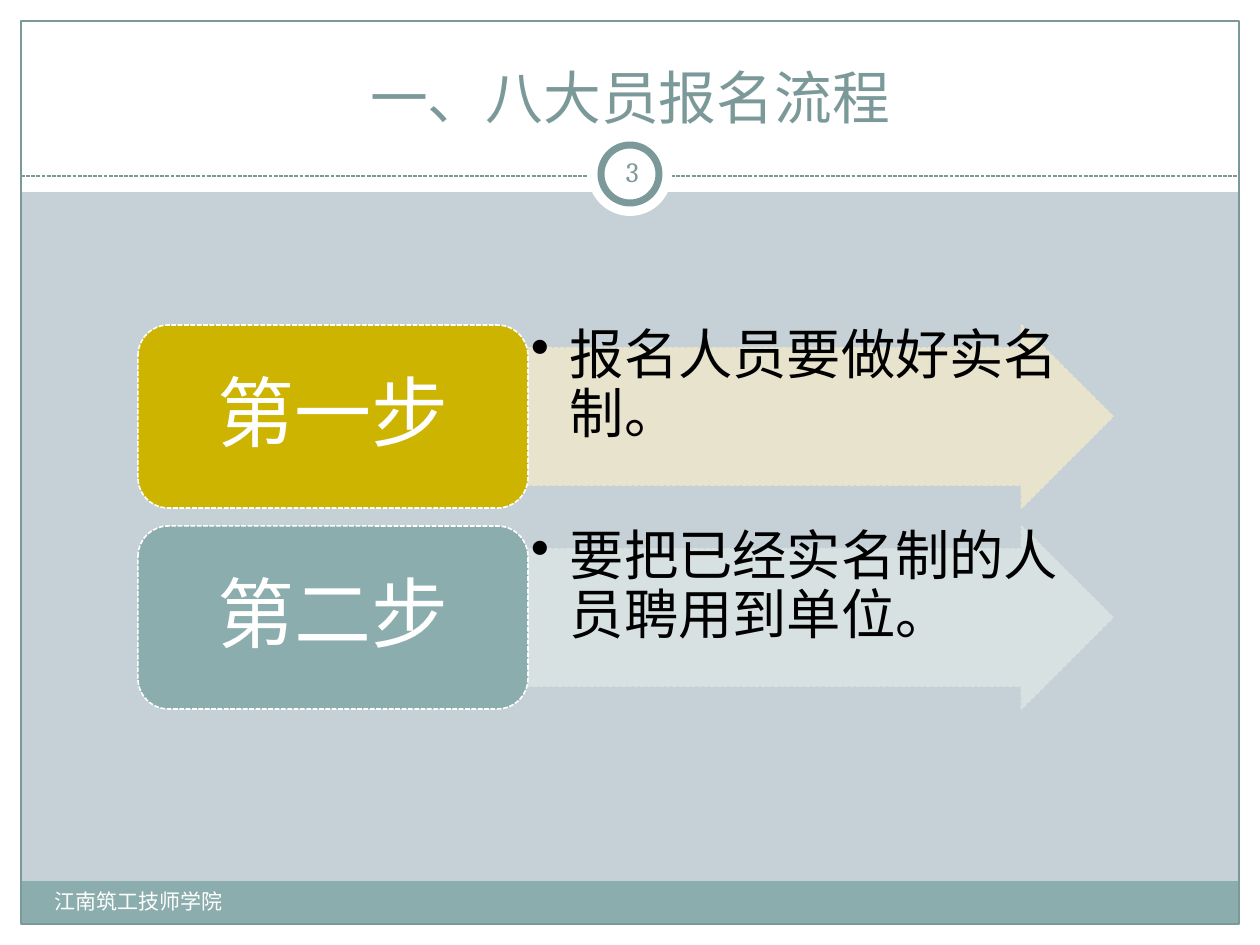
from dataclasses import dataclass
from typing import NamedTuple, Optional

from lxml.etree import SubElement
from pptx import Presentation
from pptx.dml.color import RGBColor
from pptx.enum.dml import MSO_LINE
from pptx.enum.shapes import MSO_CONNECTOR, MSO_SHAPE
from pptx.enum.text import MSO_ANCHOR, PP_ALIGN
from pptx.oxml.ns import qn
from pptx.shapes.autoshape import Shape
from pptx.slide import Slide
from pptx.util import Emu, Pt

EMU_PER_PX = 914400 / 126


@dataclass(frozen=True)
class Theme:
    font: str = "Cambria"
    background: str = "C5D1D7"
    white: str = "FFFFFF"
    black: str = "000000"
    accent: str = "7C999A"
    teal: str = "8CADAE"
    gold: str = "CCB400"
    pale_gold: str = "ECE5CC"
    pale_teal: str = "DAE3E3"
    title_size: int = 33
    footer_size: int = 12
    number_size: int = 16
    label_size: int = 44
    detail_size: int = 31
    thin_line: float = 0.75
    step_line: float = 0.9
    ring_line: float = 4


class Box(NamedTuple):
    left: int
    top: int
    width: int
    height: int


class Outline(NamedTuple):
    color: str
    width: float
    dashed: bool = False


class TextStyle(NamedTuple):
    size: int
    color: str
    align: PP_ALIGN = PP_ALIGN.LEFT
    anchor: MSO_ANCHOR = MSO_ANCHOR.TOP
    insets: tuple[int, int, int, int] = (13, 6, 13, 6)
    line_spacing: float = 1.0


class Step(NamedTuple):
    label: str
    detail: str
    fill: str
    arrow_fill: str


THEME = Theme()
SLIDE_WIDTH, SLIDE_HEIGHT = 1260, 945
MARGIN = 21
HEADER_HEIGHT = 192
FRAME = Box(MARGIN, MARGIN, SLIDE_WIDTH - 2 * MARGIN, SLIDE_HEIGHT - 2 * MARGIN)
DIVIDER_Y = 176
BAR_TOP = 881
STEP_LEFT, STEP_TOP, STEP_HEIGHT, STEP_PITCH = 138, 325, 183, 201
LABEL_WIDTH, ARROW_WIDTH = 390, 585
BULLET_INDENT = 39

BANDS = [
    (Box(0, SLIDE_HEIGHT - MARGIN, SLIDE_WIDTH, MARGIN), THEME.white),
    (Box(0, 0, SLIDE_WIDTH, HEADER_HEIGHT), THEME.white),
    (Box(0, 0, MARGIN, SLIDE_HEIGHT), THEME.white),
    (Box(SLIDE_WIDTH - MARGIN, 0, MARGIN, SLIDE_HEIGHT), THEME.white),
    (Box(MARGIN, BAR_TOP, FRAME.width, SLIDE_HEIGHT - MARGIN - BAR_TOP), THEME.teal),
]
STEPS = [
    Step("第一步", "报名人员要做好实名制。", THEME.gold, THEME.pale_gold),
    Step("第二步", "要把已经实名制的人员聘用到单位。", THEME.teal, THEME.pale_teal),
]

TITLE = TextStyle(THEME.title_size, THEME.accent, PP_ALIGN.CENTER, MSO_ANCHOR.BOTTOM)
FOOTER = TextStyle(THEME.footer_size, THEME.white)
NUMBER = TextStyle(THEME.number_size, THEME.accent, PP_ALIGN.CENTER,
                   MSO_ANCHOR.MIDDLE, (6, 6, 6, 6))
LABEL = TextStyle(THEME.label_size, THEME.white, PP_ALIGN.CENTER,
                  MSO_ANCHOR.MIDDLE, (23, 11, 23, 11), 0.9)
DETAIL = TextStyle(THEME.detail_size, THEME.black, insets=(3, 3, 10, 3), line_spacing=0.9)


def px(length: int) -> Emu:
    return Emu(round(length * EMU_PER_PX))


def scaled(box: Box) -> list[Emu]:
    return [px(length) for length in box]


def rgb(color: str) -> RGBColor:
    return RGBColor.from_string(color)


def apply_outline(line, outline: Outline) -> None:
    line.color.rgb = rgb(outline.color)
    line.width = Pt(outline.width)
    if outline.dashed:
        line.dash_style = MSO_LINE.SQUARE_DOT


def draw_shape(slide: Slide, kind: MSO_SHAPE, box: Box, fill: Optional[str] = None,
               outline: Optional[Outline] = None) -> Shape:
    shape = slide.shapes.add_shape(kind, *scaled(box))
    shape.shadow.inherit = False
    if fill:
        shape.fill.solid()
        shape.fill.fore_color.rgb = rgb(fill)
    else:
        shape.fill.background()
    if outline:
        apply_outline(shape.line, outline)
    else:
        shape.line.fill.background()
    return shape


def set_opacity(shape: Shape, percent: int) -> None:
    for color in shape.element.spPr.iter(qn("a:srgbClr")):
        SubElement(color, qn("a:alpha"), val=str(percent * 1000))


def write_text(shape: Shape, text: str, style: TextStyle) -> None:
    frame = shape.text_frame
    frame.word_wrap = True
    frame.vertical_anchor = style.anchor
    (frame.margin_left, frame.margin_top,
     frame.margin_right, frame.margin_bottom) = map(px, style.insets)
    paragraph = frame.paragraphs[0]
    paragraph.alignment = style.align
    paragraph.line_spacing = style.line_spacing
    run = paragraph.add_run()
    run.text = text
    run.font.name = THEME.font
    run.font.size = Pt(style.size)
    run.font.color.rgb = rgb(style.color)


def draw_text(slide: Slide, box: Box, text: str, style: TextStyle) -> Shape:
    text_box = slide.shapes.add_textbox(*scaled(box))
    write_text(text_box, text, style)
    return text_box


def add_bullet(shape: Shape) -> None:
    properties = shape.text_frame.paragraphs[0]._p.get_or_add_pPr()
    properties.set("marL", str(px(BULLET_INDENT)))
    properties.set("indent", str(-px(BULLET_INDENT)))
    SubElement(properties, qn("a:buChar"), char="•")


def draw_divider(slide: Slide) -> None:
    divider = slide.shapes.add_connector(
        MSO_CONNECTOR.STRAIGHT, px(MARGIN), px(DIVIDER_Y),
        px(SLIDE_WIDTH - MARGIN), px(DIVIDER_Y))
    apply_outline(divider.line, Outline(THEME.accent, THEME.thin_line, True))
    SubElement(divider.element.spPr, qn("a:effectLst"))


def draw_step(slide: Slide, step: Step, top: int) -> None:
    label_box = Box(STEP_LEFT, top, LABEL_WIDTH, STEP_HEIGHT)
    arrow_box = Box(STEP_LEFT + LABEL_WIDTH, top, ARROW_WIDTH, STEP_HEIGHT)
    arrow = draw_shape(slide, MSO_SHAPE.RIGHT_ARROW, arrow_box, step.arrow_fill,
                       Outline(step.arrow_fill, THEME.step_line, True))
    arrow.adjustments[0] = 0.75
    arrow.adjustments[1] = 0.5
    set_opacity(arrow, 90)
    add_bullet(draw_text(slide, arrow_box, step.detail, DETAIL))
    label = draw_shape(slide, MSO_SHAPE.ROUNDED_RECTANGLE, label_box, step.fill,
                       Outline(THEME.white, THEME.step_line, True))
    write_text(label, step.label, LABEL)


def main() -> None:
    presentation = Presentation()
    presentation.slide_width, presentation.slide_height = px(SLIDE_WIDTH), px(SLIDE_HEIGHT)
    slide = presentation.slides.add_slide(presentation.slide_layouts[6])
    slide.background.fill.solid()
    slide.background.fill.fore_color.rgb = rgb(THEME.background)

    for box, fill in BANDS:
        draw_shape(slide, MSO_SHAPE.RECTANGLE, box, fill)
    draw_shape(slide, MSO_SHAPE.RECTANGLE, FRAME,
               outline=Outline(THEME.accent, THEME.thin_line))
    draw_divider(slide)
    draw_shape(slide, MSO_SHAPE.OVAL, Box(588, 132, 84, 84), THEME.white)
    draw_shape(slide, MSO_SHAPE.OVAL, Box(601, 145, 58, 58), THEME.white,
               Outline(THEME.accent, THEME.ring_line))

    draw_text(slide, Box(42, 32, 1176, 105), "一、八大员报名流程", TITLE)
    draw_text(slide, Box(42, 883, 494, 50), "江南筑工技师学院", FOOTER)
    draw_text(slide, Box(601, 141, 63, 60), "3", NUMBER)
    for index, step in enumerate(STEPS):
        draw_step(slide, step, STEP_TOP + index * STEP_PITCH)
    presentation.save("out.pptx")


if __name__ == "__main__":
    main()
